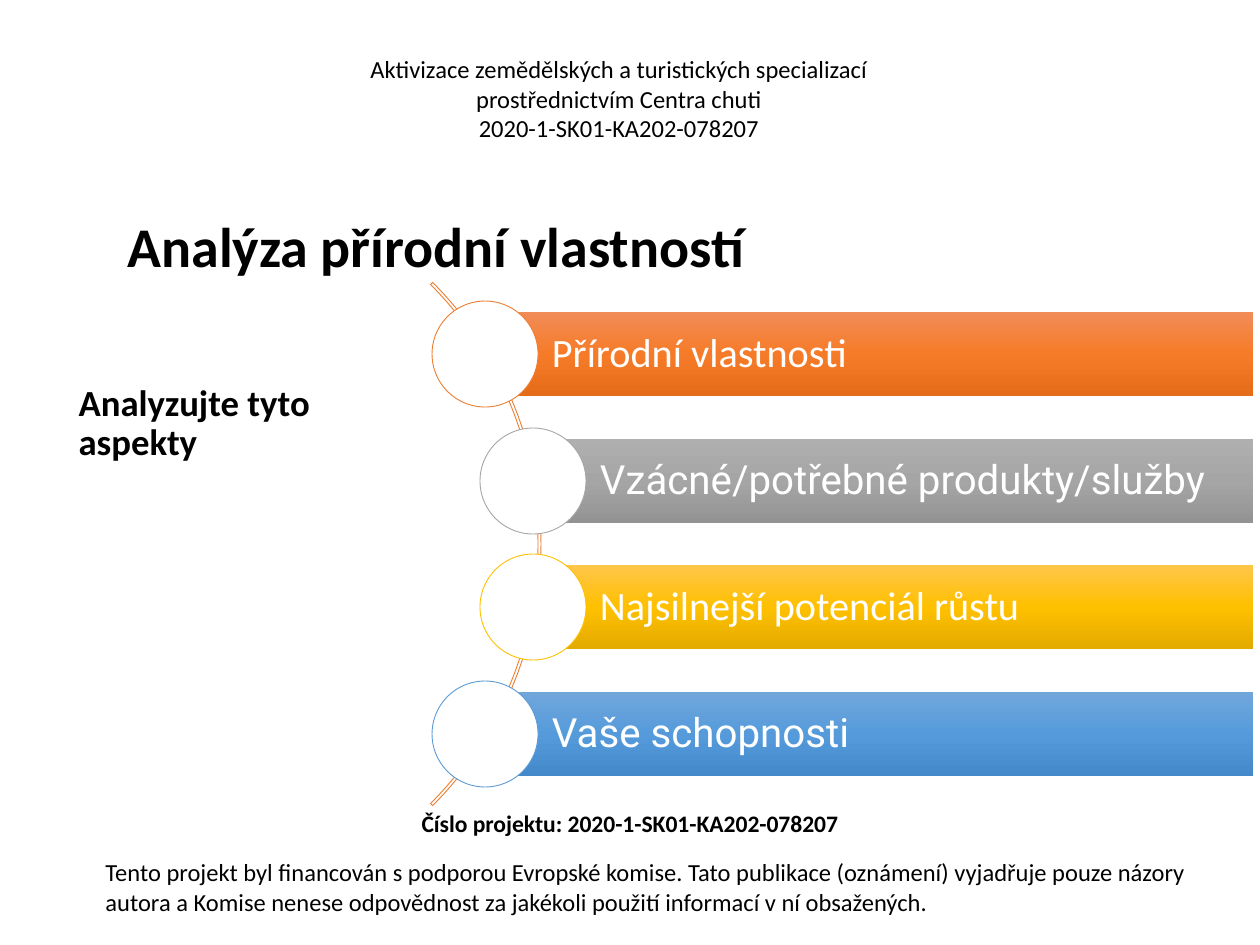
from copy import deepcopy
from dataclasses import dataclass

from pptx import Presentation
from pptx.dml.color import RGBColor
from pptx.enum.shapes import MSO_SHAPE
from pptx.enum.text import MSO_ANCHOR, MSO_AUTO_SIZE, PP_ALIGN
from pptx.oxml.ns import qn
from pptx.oxml.xmlchemy import OxmlElement
from pptx.util import Emu, Pt

EMU_PER_PX = 914400 / 126


@dataclass(frozen=True)
class Theme:
    font: str = "Calibri"
    alt_font: str = "Roboto"
    ink: str = "000000"
    paper: str = "FFFFFF"
    arc: str = "ED7D31"
    title: float = 32
    body: float = 21
    label: float = 23
    small: float = 14
    number: float = 13.5
    hairline: float = 0.5


THEME = Theme()

# Label, font, circle outline, gradient from top to bottom
ASPECTS = [
    ("Přírodní vlastnosti", THEME.font, "ED7D31", ("F18C57", "F67B28", "E56C19")),
    ("Vzácné/potřebné produkty/služby", THEME.alt_font, "A5A5A5", ("AFAFAF", "A5A5A5", "939393")),
    ("Najsilnejší potenciál růstu", THEME.font, "FFC000", ("FFC64B", "FFC000", "E3AB00")),
    ("Vaše schopnosti", THEME.alt_font, "5B9BD5", ("71A6DB", "559BDB", "448ACA")),
]


def px(n):
    return Emu(round(n * EMU_PER_PX))


def rgb(color):
    return RGBColor.from_string(color)


def place(sp, box):
    sp.left, sp.top, sp.width, sp.height = (px(n) for n in box)


def write(sp, text, size, color=THEME.ink, font=THEME.font, bold=False,
          align=PP_ALIGN.LEFT, anchor=MSO_ANCHOR.TOP, line_spacing=1.0):
    """Fill a shape with one formatted paragraph."""
    tf = sp.text_frame
    tf.word_wrap = True
    tf.auto_size = MSO_AUTO_SIZE.NONE
    tf.vertical_anchor = anchor
    p = tf.paragraphs[0]
    p.text = text
    p.alignment = align
    p.line_spacing = line_spacing
    p.space_before = Pt(0)
    for r in p.runs:
        r.font.name, r.font.size, r.font.bold = font, Pt(size), bold
        r.font.color.rgb = rgb(color)
    return p


def add_text(slide, box, text, size, **fmt):
    sp = slide.shapes.add_textbox(*(px(n) for n in box))
    write(sp, text, size, **fmt)


def add_shape(slide, kind, box, line=None, fill=None):
    sp = slide.shapes.add_shape(kind, *(px(n) for n in box))
    sp.shadow.inherit = False
    if fill:
        sp.fill.solid()
        sp.fill.fore_color.rgb = rgb(fill)
    else:
        sp.fill.background()
    if line:
        sp.line.color.rgb = rgb(line)
        sp.line.width = Pt(THEME.hairline)
    else:
        sp.line.fill.background()
    return sp


def fill_gradient(sp, colors):
    """Evenly spaced stops, running from top to bottom."""
    sp.fill.gradient()
    sp.fill.gradient_angle = 270
    stops = sp._element.spPr.find(qn("a:gradFill")).find(qn("a:gsLst"))
    while len(stops) < len(colors):
        stops.append(deepcopy(stops[0]))
    for i, (stop, color) in enumerate(zip(sp.fill.gradient_stops, colors)):
        stop.position = i / (len(colors) - 1)
        stop.color.rgb = rgb(color)


def add_header(slide, box):
    add_text(slide, box, "Aktivizace zemědělských a turistických specializací "
             "prostřednictvím Centra chuti\v2020-1-SK01-KA202-078207",
             THEME.small, align=PP_ALIGN.CENTER)


def add_title(slide, box):
    sp = slide.shapes.title
    place(sp, box)
    write(sp, "Analýza přírodní vlastností", THEME.title, bold=True)


def add_prompt(slide, box):
    sp = slide.placeholders[1]
    place(sp, box)
    p = write(sp, "Analyzujte tyto aspekty", THEME.body, bold=True, line_spacing=0.9)
    # No bullet and no hanging indent
    pPr = p._p.get_or_add_pPr()
    pPr.set("marL", "0")
    pPr.set("indent", "0")
    pPr.append(OxmlElement("a:buNone"))


def add_aspects(slide, box):
    """Bars with circles, strung along an arc."""
    left, top, width, height = box
    bar_h, circle, indent, arc = 84, 106, 48, 740
    right = left + width

    # Arc, of which only the right quarter is drawn
    sp = add_shape(slide, MSO_SHAPE.BLOCK_ARC,
                   (left + 109 - arc, top + (height - arc) // 2, arc, arc), line=THEME.arc)
    for i, value in enumerate((189, 27, 0.004)):
        sp.adjustments[i] = value

    last = len(ASPECTS) - 1
    for i, (text, font, outline, colors) in enumerate(ASPECTS):
        x = left + (indent if 0 < i < last else 0)
        y = top + round(i * (height - circle) / last)
        # Bar starts at the centre of its circle
        bar_x = x + circle // 2
        bar = add_shape(slide, MSO_SHAPE.RECTANGLE,
                        (bar_x, y + (circle - bar_h) // 2, right - bar_x, bar_h))
        fill_gradient(bar, colors)
        write(bar, text, THEME.label, color=THEME.paper, font=font,
              anchor=MSO_ANCHOR.MIDDLE, line_spacing=0.9)
        tf = bar.text_frame
        tf.margin_left = px(67)
        tf.margin_top = tf.margin_right = tf.margin_bottom = px(8)
        add_shape(slide, MSO_SHAPE.OVAL, (x, y, circle, circle),
                  line=outline, fill=THEME.paper)


def add_footer(slide, box):
    left, top, width, height = box
    add_text(slide, (left + 222, top, 630, 42), "Číslo projektu: 2020-1-SK01-KA202-078207",
             THEME.number, bold=True, align=PP_ALIGN.CENTER)
    add_text(slide, (left, top + 48, width, height - 48),
             "Tento projekt byl financován s podporou Evropské komise. Tato publikace "
             "(oznámení) vyjadřuje pouze názory autora a Komise nenese odpovědnost za "
             "jakékoli použití informací v ní obsažených.", THEME.small)


def main():
    prs = Presentation()
    prs.slide_width, prs.slide_height = px(1260), px(945)
    slide = prs.slides.add_slide(prs.slide_layouts[1])
    add_title(slide, (115, 205, 1070, 116))
    add_footer(slide, (93, 803, 1167, 120))
    add_header(slide, (304, 48, 630, 102))
    add_prompt(slide, (66, 378, 357, 244))
    add_aspects(slide, (432, 301, 821, 486))
    prs.save("out.pptx")


if __name__ == "__main__":
    main()
